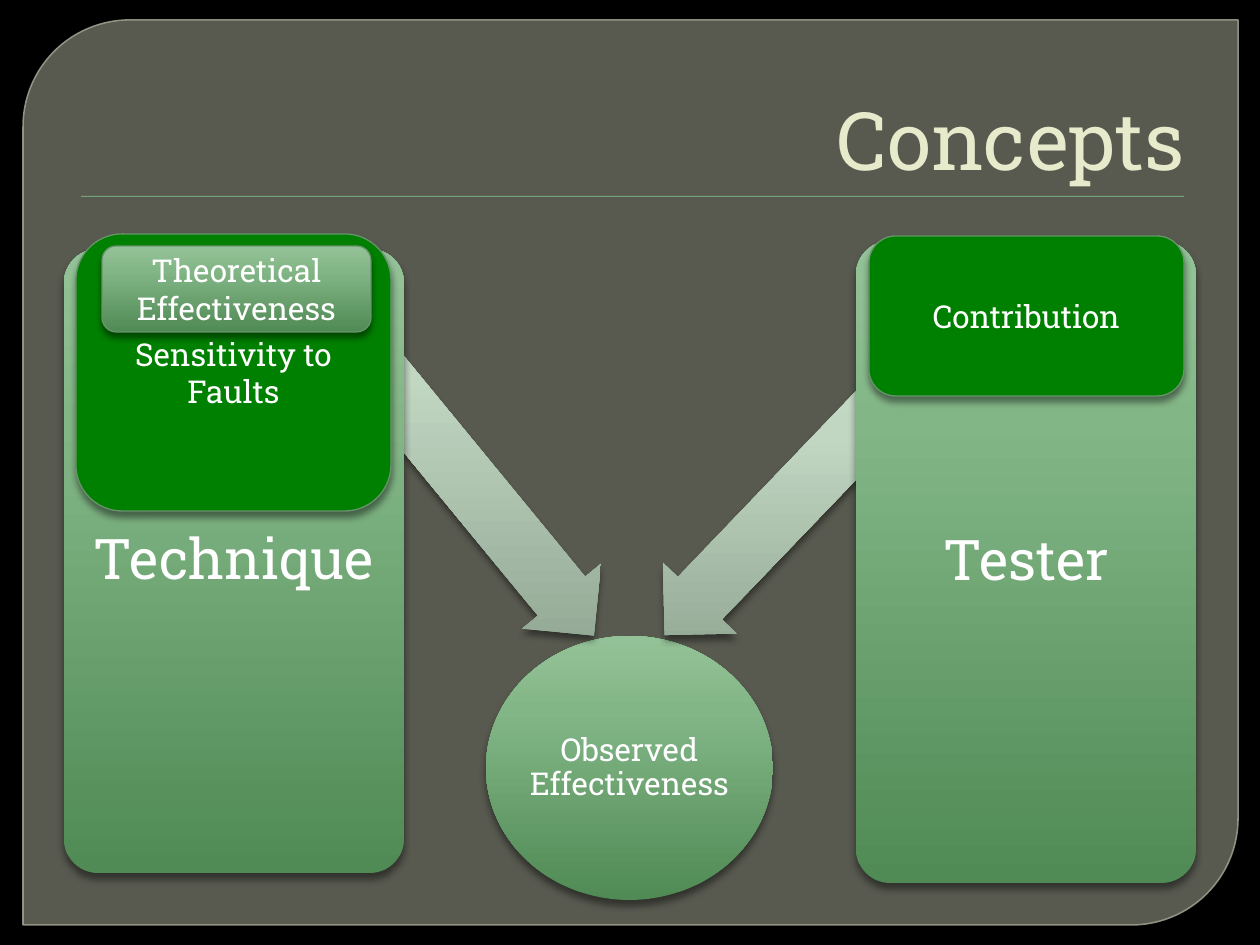
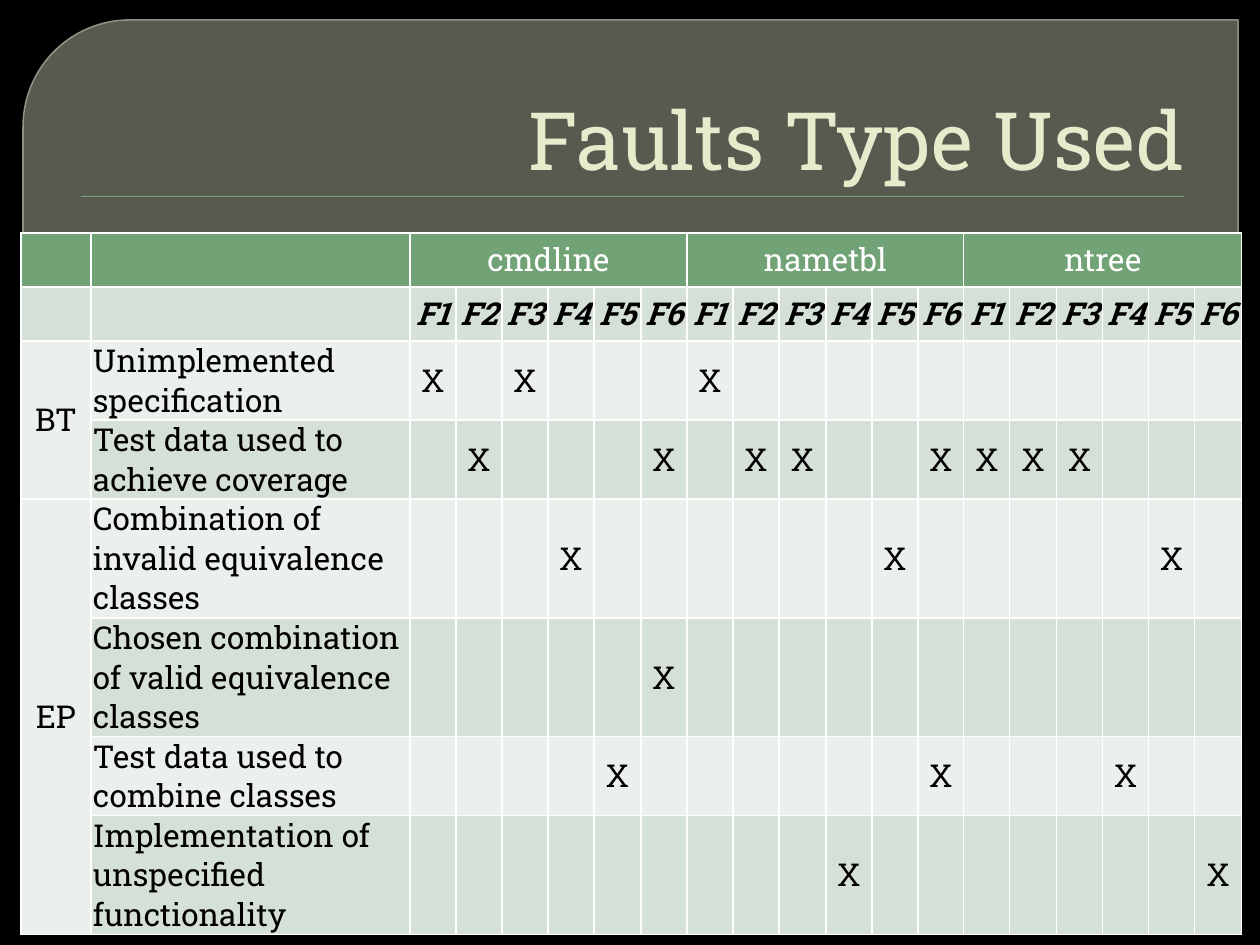
from pptx import Presentation
from pptx.dml.color import RGBColor
from pptx.enum.shapes import MSO_SHAPE as SHAPE
from pptx.enum.text import MSO_ANCHOR as ANCHOR, PP_ALIGN as ALIGN
from pptx.oxml import parse_xml
from pptx.oxml.ns import nsdecls
from pptx.util import Emu, Pt

FONT = "Roboto Slab"
WHITE, BLACK, CREAM = "FFFFFF", "000000", "E7EACB"
SAGE, SAGE_MID, SAGE_PALE = "72A376", "D5E0D6", "EBF0EC"
PANEL, PANEL_EDGE = "888B7B", "9DA090"
GREEN, GREEN_EDGE = "008000", "67946B"
LEAF = ["508A55", "83B687", "94C298"]
MIST = ["90A692", "C1D7C2", "C8DDC9"]
GRADIENT_STOPS = [0, 72, 100]
SOFT_SHADOW = (43, 4, 3)  # opacity in percent, blur and distance in points
rgb = RGBColor.from_string


def px(n):
    """Convert pixels, 126 to the inch, to EMU."""
    return Emu(round(n * 914400 / 126))


def add_panel(slide, kind, box, fill, edge=None, shadow=SOFT_SHADOW,
              label="", size=18, spacing=1.0, margin=13):
    """Add a shape; fill is one colour, or a list for a bottom-up gradient."""
    panel = slide.shapes.add_shape(kind, *map(px, box))
    props = panel.element.spPr
    panel.shadow.inherit = False
    if isinstance(fill, str):
        panel.fill.solid()
        panel.fill.fore_color.rgb = rgb(fill)
    else:
        stops = "".join(
            f'<a:gs pos="{pos * 1000}"><a:srgbClr val="{colour}"/></a:gs>'
            for pos, colour in zip(GRADIENT_STOPS, fill))
        props.find("{*}prstGeom").addnext(parse_xml(
            f'<a:gradFill rotWithShape="0" {nsdecls("a")}><a:gsLst>{stops}</a:gsLst>'
            '<a:lin ang="16200000" scaled="0"/></a:gradFill>'))
    if edge:
        panel.line.color.rgb = rgb(edge)
        panel.line.width = Pt(0.75)
    else:
        panel.line.fill.background()
    if shadow:
        opacity, blur, distance = shadow
        props.find("{*}effectLst").append(parse_xml(
            f'<a:outerShdw blurRad="{Pt(blur)}" dist="{Pt(distance)}" dir="5400000" '
            f'rotWithShape="0" {nsdecls("a")}><a:srgbClr val="{BLACK}">'
            f'<a:alpha val="{opacity * 1000}"/></a:srgbClr></a:outerShdw>'))
    if label:
        frame = panel.text_frame
        frame.word_wrap = True
        frame.vertical_anchor = ANCHOR.MIDDLE
        frame.margin_left = frame.margin_right = px(margin)
        paragraph = frame.paragraphs[0]
        paragraph.text = label
        paragraph.alignment = ALIGN.CENTER
        paragraph.line_spacing = spacing
        paragraph.font.name = FONT
        paragraph.font.size = Pt(size)
        paragraph.font.color.rgb = rgb(WHITE)
    return panel


prs = Presentation()
prs.slide_width, prs.slide_height = px(1260), px(945)
layout = prs.slide_layouts[5]
layout.background.fill.solid()
layout.background.fill.fore_color.rgb = rgb(BLACK)

slides = []
for heading in ("Concepts", "Faults Type Used"):
    slide = prs.slides.add_slide(layout)
    title = slide.shapes.title
    title.left, title.top, title.width, title.height = map(px, (63, 35, 1134, 158))
    title.text_frame.vertical_anchor = ANCHOR.BOTTOM
    paragraph = title.text_frame.paragraphs[0]
    paragraph.text = heading
    paragraph.alignment = ALIGN.RIGHT
    paragraph.font.name = FONT
    paragraph.font.size = Pt(46)
    paragraph.font.color.rgb = rgb(CREAM)
    slides.append(slide)
concepts, faults = slides

# Shared backdrop: built once, then moved to the layout behind the title
backdrop = add_panel(concepts, SHAPE.ROUND_2_DIAG_RECTANGLE, (23, 20, 1215, 905),
                     PANEL, PANEL_EDGE, shadow=None)
backdrop.adjustments[0] = 0.118
backdrop.line.width = Pt(0.87)
for colour, opacity in zip(backdrop.element.spPr.iter("{*}srgbClr"), (65, 88)):
    colour.append(parse_xml(f'<a:alpha val="{opacity * 1000}" {nsdecls("a")}/>'))
title_rule = add_panel(concepts, SHAPE.RECTANGLE, (81, 196, 1103, 1), SAGE,
                       shadow=(75, 1, 1))
for position, part in enumerate((backdrop, title_rule), start=2):
    layout.shapes.element.insert(position, part.element)

# Concepts: two columns feeding the observed effectiveness
add_panel(concepts, SHAPE.OVAL, (486, 636, 287, 264), LEAF,
          label="Observed Effectiveness", spacing=0.9, margin=1)
for arrow_box, angle, column_box, label in (
        ((231, 413, 444, 102), 230.6, (64, 249, 340, 624), "Technique"),
        ((610, 456, 355, 102), 313.8, (856, 241, 340, 642), "Tester")):
    arrow = add_panel(concepts, SHAPE.LEFT_ARROW, arrow_box, MIST)
    arrow.rotation = angle
    arrow.adjustments[0] = 0.6
    column = add_panel(concepts, SHAPE.ROUNDED_RECTANGLE, column_box, LEAF,
                       label=label, size=32, spacing=0.9, margin=9)
    column.adjustments[0] = 0.1

for box, fill, label in (
        ((76, 234, 315, 277), GREEN, "Sensitivity to Faults"),
        ((102, 246, 269, 86), LEAF, "Theoretical Effectiveness"),
        ((869, 236, 315, 160), GREEN, "Contribution")):
    add_panel(concepts, SHAPE.ROUNDED_RECTANGLE, box, fill, GREEN_EDGE, label=label)

# Faults: which fault of each program belongs to which type
PROGRAMS = ["cmdline", "nametbl", "ntree"]
FAULTS = ["F1", "F2", "F3", "F4", "F5", "F6"]
FAULT_TYPES = [
    ("BT", "Unimplemented specification", "X.X... X..... ......"),
    ("", "Test data used to achieve coverage", ".X...X .XX..X XXX..."),
    ("EP", "Combination of invalid equivalence classes", "...X.. ....X. ....X."),
    ("", "Chosen combination of valid equivalence classes", ".....X ...... ......"),
    ("", "Test data used to combine classes", "....X. .....X ...X.."),
    ("", "Implementation of unspecified functionality", "...... ...X.. .....X"),
]
header = ["", ""]
for program in PROGRAMS:
    header += [program] + [""] * (len(FAULTS) - 1)
rows = [header, ["", ""] + FAULTS * len(PROGRAMS)]
for technique, fault_type, marks in FAULT_TYPES:
    rows.append([technique, fault_type]
                + list(marks.replace(" ", "").replace(".", " ")))

row_count, column_count = len(rows), len(header)
fault_columns = column_count - 2
table = faults.shapes.add_table(row_count, column_count, px(21), px(233),
                                px(1221), px(54 * row_count)).table
edges = [0, 70] + [389 + 832 * i // fault_columns for i in range(fault_columns + 1)]
for column, left, right in zip(table.columns, edges, edges[1:]):
    column.width = px(right - left)

for r, values in enumerate(rows):
    table.rows[r].height = px(54)
    for c, value in enumerate(values):
        cell = table.cell(r, c)
        if r == 0:
            colour = SAGE
        elif r % 2 == 0 or (c == 0 and r > 1):
            colour = SAGE_PALE
        else:
            colour = SAGE_MID
        cell.fill.solid()
        cell.fill.fore_color.rgb = rgb(colour)
        cell.vertical_anchor = ANCHOR.MIDDLE
        cell.margin_left = cell.margin_right = px(2)
        cell.margin_top = cell.margin_bottom = 0
        paragraph = cell.text_frame.paragraphs[0]
        paragraph.text = value.strip()
        paragraph.alignment = ALIGN.LEFT if c == 1 else ALIGN.CENTER
        paragraph.line_spacing = 0.95
        paragraph.font.name = FONT
        paragraph.font.size = Pt(18)
        paragraph.font.bold = paragraph.font.italic = r == 1
        paragraph.font.color.rgb = rgb(WHITE if r == 0 else BLACK)

for first in range(2, column_count, len(FAULTS)):
    table.cell(0, first).merge(table.cell(0, first + len(FAULTS) - 1))
for first, last in ((2, 3), (4, 7)):
    table.cell(first, 0).merge(table.cell(last, 0))

prs.save("out.pptx")
